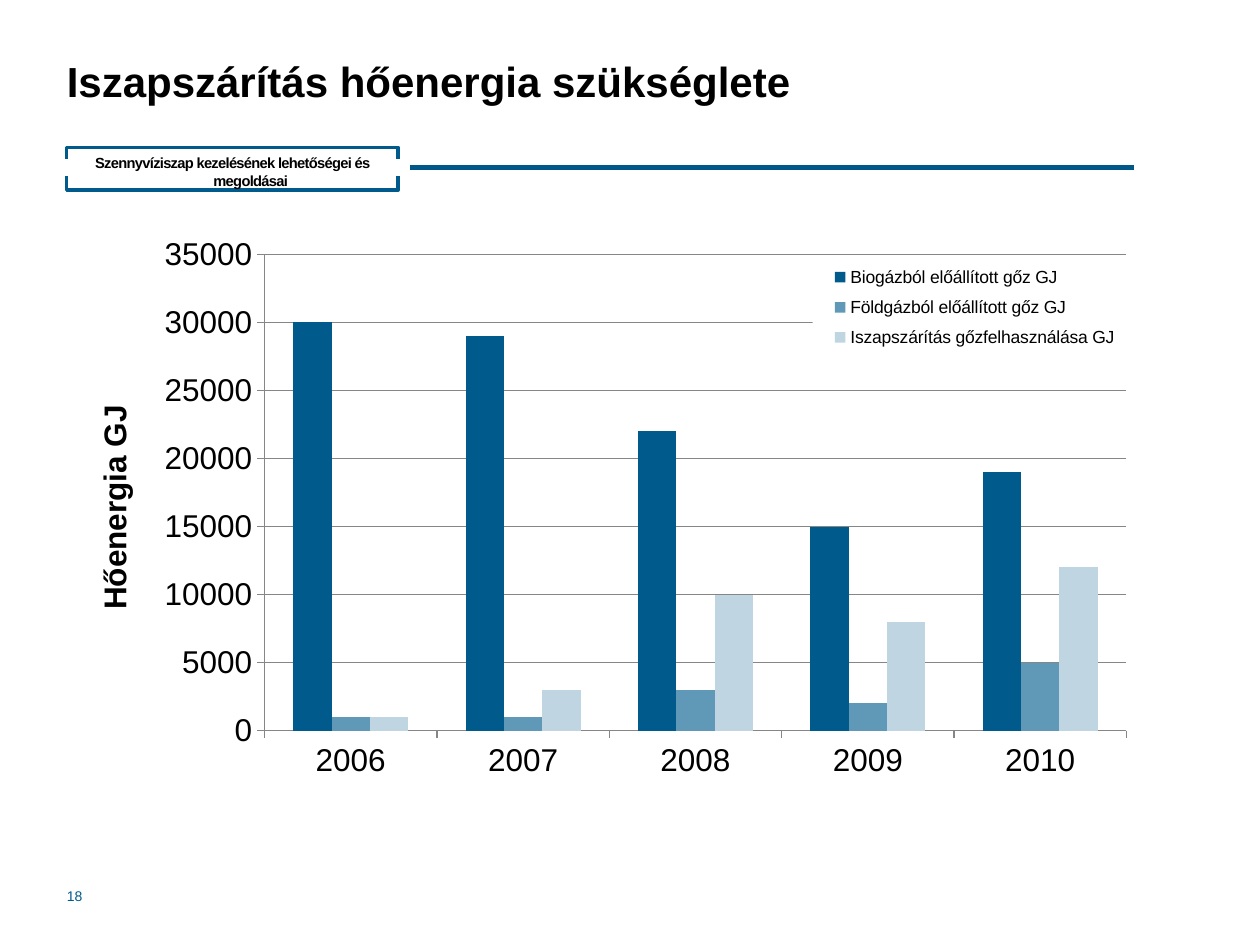
from lxml import etree
from pptx import Presentation
from pptx.chart.data import CategoryChartData
from pptx.dml.color import RGBColor
from pptx.enum.chart import XL_CHART_TYPE as ChartType, XL_LEGEND_POSITION as LegendPosition
from pptx.enum.chart import XL_TICK_MARK as TickMark
from pptx.enum.shapes import MSO_CONNECTOR as Connector, MSO_SHAPE as Shape
from pptx.enum.text import MSO_ANCHOR as Anchor, MSO_AUTO_SIZE as AutoSize, PP_ALIGN as Align
from pptx.oxml import parse_xml
from pptx.oxml.ns import nsdecls, qn
from pptx.util import Inches, Pt

BLUE = RGBColor(0x00, 0x5A, 0x8C)
RULE_BLUE = RGBColor(0x00, 0x58, 0x89)
MID_BLUE = RGBColor(0x60, 0x98, 0xB7)
PALE_BLUE = RGBColor(0xBF, 0xD6, 0xE2)
GREY = RGBColor(0x86, 0x86, 0x86)
BLACK = RGBColor(0x00, 0x00, 0x00)
WHITE = RGBColor(0xFF, 0xFF, 0xFF)

YEARS = ["2006", "2007", "2008", "2009", "2010"]
SERIES = [
    ("Biogázból előállított gőz GJ", [30000, 29000, 22000, 15000, 19000], BLUE),
    ("Földgázból előállított gőz GJ", [1000, 1000, 3000, 2000, 5000], MID_BLUE),
    ("Iszapszárítás gőzfelhasználása GJ", [1000, 3000, 10000, 8000, 12000], PALE_BLUE),
]
TAG_AREA = (0.53, 1.17, 2.63, 0.34)
CHART_AREA = (0.53, 1.78, 8.58, 4.8)


def set_layout(element, index, left, top, width=None, height=None, inner=False):
    """Place a chart part, given in slide inches, as fractions of the chart area."""
    chart_left, chart_top, chart_width, chart_height = CHART_AREA
    fractions = {"x": (left - chart_left) / chart_width, "y": (top - chart_top) / chart_height}
    if width:
        fractions.update(w=width / chart_width, h=height / chart_height)
    for old in element.findall(qn("c:layout")):
        element.remove(old)
    target = '<c:layoutTarget val="inner"/>' if inner else ""
    modes = "".join(f'<c:{key}Mode val="edge"/>' for key in "xy")
    values = "".join(f'<c:{key} val="{value:.4f}"/>' for key, value in fractions.items())
    element.insert(index, parse_xml(
        f'<c:layout {nsdecls("c")}><c:manualLayout>{target}{modes}{values}'
        '</c:manualLayout></c:layout>'))


class SlideBuilder:
    font_name = "Arial"

    def __init__(self, page):
        self.page = page

    def style(self, font, size, color=BLACK, bold=False):
        font.name, font.size, font.bold = self.font_name, Pt(size), bold
        font.color.rgb = color

    def line(self, x1, x2, y, color, width):
        line = self.page.shapes.add_connector(
            Connector.STRAIGHT, Inches(x1), Inches(y), Inches(x2), Inches(y))
        line.line.color.rgb, line.line.width = color, Pt(width)
        etree.SubElement(line._element.spPr, qn("a:effectLst"))

    def frame(self, area):
        box = self.page.shapes.add_shape(Shape.RECTANGLE, *map(Inches, area))
        box.shadow.inherit = False
        box.fill.solid()
        box.fill.fore_color.rgb = WHITE
        box.line.color.rgb, box.line.width = BLUE, Pt(2)

    def placeholder(self, index, area, text, size, anchor, align):
        box = self.page.placeholders[index]
        box.left, box.top, box.width, box.height = map(Inches, area)
        # Bring the text in front of the drawn shapes
        box._element.getparent().append(box._element)
        frame = box.text_frame
        frame.text = text
        frame.word_wrap, frame.auto_size = True, AutoSize.NONE
        frame.vertical_anchor = anchor
        para = frame.paragraphs[0]
        para.alignment, para.space_before = align, Pt(0)
        self.style(para.runs[0].font, size, bold=True)
        return para

    def page_number(self, area, text):
        box = self.page.shapes.add_textbox(*map(Inches, area))
        frame = box.text_frame
        frame.margin_left = frame.margin_right = 0
        frame.margin_top = frame.margin_bottom = 0
        frame.word_wrap, frame.vertical_anchor = False, Anchor.BOTTOM
        frame.text = text
        self.style(frame.paragraphs[0].runs[0].font, 8, BLUE)

    def column_chart(self, axis_title):
        data = CategoryChartData()
        data.categories = YEARS
        for name, values, _ in SERIES:
            data.add_series(name, values)
        chart = self.page.shapes.add_chart(
            ChartType.COLUMN_CLUSTERED, *map(Inches, CHART_AREA), data).chart
        chart.has_title = False
        self.style(chart.font, 18)

        # Columns
        plot = chart.plots[0]
        plot.gap_width, plot.overlap, plot.vary_by_categories = 150, 0, False
        for series, (_, _, color) in zip(plot.series, SERIES):
            series.format.fill.solid()
            series.format.fill.fore_color.rgb = color
        set_layout(chart._chartSpace.chart.plotArea, 0, 2.1, 2.02, 6.84, 3.78, inner=True)

        # Axes
        value_axis = chart.value_axis
        value_axis.minimum_scale, value_axis.maximum_scale = 0, 35000
        value_axis.major_unit = 5000
        value_axis.has_major_gridlines = True
        for part in (value_axis, chart.category_axis, value_axis.major_gridlines):
            part.format.line.color.rgb = GREY
            part.format.line.width = Pt(0.75)
        for axis in (value_axis, chart.category_axis):
            axis.major_tick_mark = TickMark.OUTSIDE
            self.style(axis.tick_labels.font, 18)
        title = value_axis.axis_title
        title.text_frame.text = axis_title
        self.style(title.text_frame.paragraphs[0].runs[0].font, 18, bold=True)
        body = title._element.find(".//" + qn("a:bodyPr"))
        body.set("rot", "-5400000")
        body.set("vert", "horz")
        set_layout(title._element, 1, 0.7, 3.17)

        # Legend
        chart.has_legend = True
        legend = chart.legend
        legend.position, legend.include_in_layout = LegendPosition.BOTTOM, False
        self.style(legend.font, 10)
        set_layout(legend._element, 1, 6.45, 2.04, 2.57, 0.8)
        legend._element.find(qn("c:overlay")).addnext(parse_xml(
            f'<c:spPr {nsdecls("c", "a")}><a:solidFill><a:srgbClr val="{WHITE}"/>'
            '</a:solidFill><a:ln><a:noFill/></a:ln></c:spPr>'))


def main():
    deck = Presentation()
    deck.slide_width, deck.slide_height = Inches(10), Inches(7.5)
    builder = SlideBuilder(deck.slides.add_slide(deck.slide_layouts[1]))

    # Rule and bracketed frame
    builder.line(3.08, 9, 1.33, RULE_BLUE, 2.5)
    builder.frame(TAG_AREA)
    builder.line(0.42, 3.25, 1.33, WHITE, 10)

    # Page number and chart
    builder.page_number((0.53, 7.03, 0.29, 0.15), "18")
    builder.column_chart("Hőenergia GJ")

    # Title and topic tag
    builder.placeholder(0, (0.43, 0.27, 7.32, 0.74), "Iszapszárítás hőenergia szükséglete",
                        24, Anchor.MIDDLE, Align.LEFT)
    tag = builder.placeholder(1, TAG_AREA, "Szennyvíziszap kezelésének lehetőségei és megoldásai",
                              8.4, Anchor.TOP, Align.CENTER)
    properties = tag._p.get_or_add_pPr()
    properties.set("marL", str(Inches(0.29)))
    properties.set("indent", str(Inches(-0.29)))
    etree.SubElement(properties, qn("a:buNone"))
    tag.runs[0].font._element.set("spc", "-40")

    deck.save("out.pptx")


if __name__ == "__main__":
    main()
